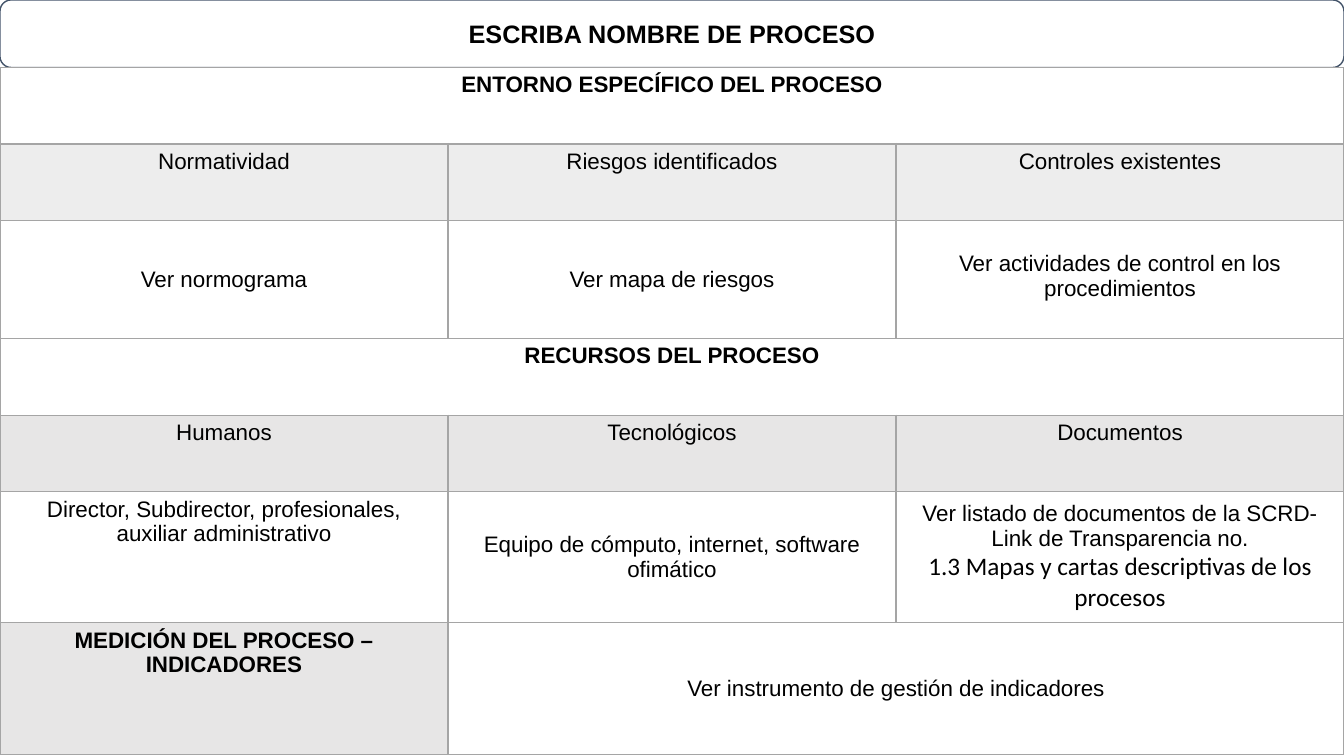
from pptx import Presentation
from pptx.dml.color import RGBColor
from pptx.enum.shapes import MSO_SHAPE as Shape
from pptx.enum.text import MSO_ANCHOR as Anchor, MSO_AUTO_SIZE as AutoSize, PP_ALIGN as Align
from pptx.oxml.ns import qn
from pptx.util import Inches, Pt
from lxml.etree import SubElement

COLORS = {"text": "000000", "white": "FFFFFF", "frame": "44546A",
          "border": "A5A5A5", "resource": "E7E6E6", "context": "EDEDED"}
WIDTH, HEIGHT, TITLE_HEIGHT = 13.33, 7.5, 0.67
ROW_HEIGHTS = [0.76, 0.76, 1.17, 0.76, 0.76, 1.3, 1.31]
COLUMNS = 3


def color(name):
    """Return the named colour."""
    return RGBColor.from_string(COLORS[name])


def write(frame, *lines, size=16, font="Arial", bold=False):
    """Write centred paragraphs; a line is text or a (text, format) pair."""
    for index, line in enumerate(lines):
        text, style = line if isinstance(line, tuple) else (line, {})
        para = frame.paragraphs[0] if index == 0 else frame.add_paragraph()
        para.alignment = Align.CENTER
        span = para.add_run()
        span.text = text
        span.font.size = Pt(style.get("size", size))
        span.font.name = style.get("font", font)
        span.font.bold = bold
        span.font.color.rgb = color("text")


def set_border(cell, side, points):
    """Draw one side of a cell's border."""
    line = SubElement(cell._tc.get_or_add_tcPr(), qn(f"a:ln{side}"), w=str(Pt(points)))
    fill = SubElement(line, qn("a:solidFill"))
    SubElement(fill, qn("a:srgbClr"), val=COLORS["border"])


def add_title(page, text):
    """Place the process name in a rounded frame."""
    area = [Inches(value) for value in (0, 0, WIDTH, TITLE_HEIGHT)]
    frame = page.shapes.add_shape(Shape.ROUNDED_RECTANGLE, *area)
    frame.shadow.inherit = False
    frame.fill.solid()
    frame.fill.fore_color.rgb = color("white")
    frame.line.color.rgb = color("frame")
    frame.line.width = Pt(1)
    title = page.shapes.title
    title.left, title.top, title.width, title.height = area
    title.text_frame.auto_size = AutoSize.NONE
    title.text_frame.vertical_anchor = Anchor.MIDDLE
    write(title.text_frame, text, size=18, bold=True)
    frame._element.addnext(title._element)


def add_grid(page):
    """Add the bordered table with white cells."""
    grid = page.shapes.add_table(len(ROW_HEIGHTS), COLUMNS, Inches(0), Inches(TITLE_HEIGHT),
                                 Inches(WIDTH), Inches(HEIGHT - TITLE_HEIGHT)).table
    grid.first_row = grid.horz_banding = False
    for column in grid.columns:
        column.width = Inches(WIDTH / COLUMNS)
    for index, height in enumerate(ROW_HEIGHTS):
        grid.rows[index].height = Inches(height)
        for cell in grid.rows[index].cells:
            for side in "LRTB":
                heavy = (index, side) in [(0, "B"), (1, "T")]
                set_border(cell, side, 2 if heavy else 1)
            paint(cell, "white")
    return grid


def paint(cell, name):
    """Fill a cell with the named colour."""
    cell.fill.solid()
    cell.fill.fore_color.rgb = color(name)


def fill_cell(cell, *lines, fill="white", anchor=Anchor.TOP, bold=False):
    """Give a cell its text, fill and anchor."""
    paint(cell, fill)
    cell.vertical_anchor = anchor
    write(cell.text_frame, *lines, bold=bold)


def add_section(grid, row, heading, labels, fill):
    """Fill a merged heading row and the label row below it."""
    grid.cell(row, 0).merge(grid.cell(row, COLUMNS - 1))
    fill_cell(grid.cell(row, 0), heading, bold=True)
    for column, label in enumerate(labels):
        fill_cell(grid.cell(row + 1, column), label, fill=fill)


def main():
    """Build the process sheet."""
    deck = Presentation()
    deck.slide_width, deck.slide_height = Inches(WIDTH), Inches(HEIGHT)
    page = deck.slides.add_slide(deck.slide_layouts[5])
    add_title(page, "ESCRIBA NOMBRE DE PROCESO")
    grid = add_grid(page)

    add_section(grid, 0, "ENTORNO ESPECÍFICO DEL PROCESO",
                ["Normatividad", "Riesgos identificados", "Controles existentes"], "context")
    fill_cell(grid.cell(2, 0), "Ver normograma", anchor=Anchor.MIDDLE)
    fill_cell(grid.cell(2, 1), "Ver mapa de riesgos", anchor=Anchor.MIDDLE)
    controls = grid.cell(2, 2)
    fill_cell(controls, "Ver actividades de control en los procedimientos")
    controls.margin_top = Inches(0.3)

    add_section(grid, 3, "RECURSOS DEL PROCESO",
                ["Humanos", "Tecnológicos", "Documentos"], "resource")
    fill_cell(grid.cell(5, 0), "Director, Subdirector, profesionales, auxiliar administrativo")
    fill_cell(grid.cell(5, 1), "Equipo de cómputo, internet, software ofimático",
              anchor=Anchor.MIDDLE)
    fill_cell(grid.cell(5, 2), "Ver listado de documentos de la SCRD-Link de Transparencia no.",
              ("1.3 Mapas y cartas descriptivas de los procesos", {"size": 18, "font": "Calibri"}),
              anchor=Anchor.MIDDLE)

    fill_cell(grid.cell(6, 0), "MEDICIÓN DEL PROCESO –", "INDICADORES",
              fill="resource", bold=True)
    grid.cell(6, 1).merge(grid.cell(6, 2))
    fill_cell(grid.cell(6, 1), "Ver instrumento de gestión de indicadores",
              anchor=Anchor.MIDDLE)
    deck.save("out.pptx")


if __name__ == "__main__":
    main()
